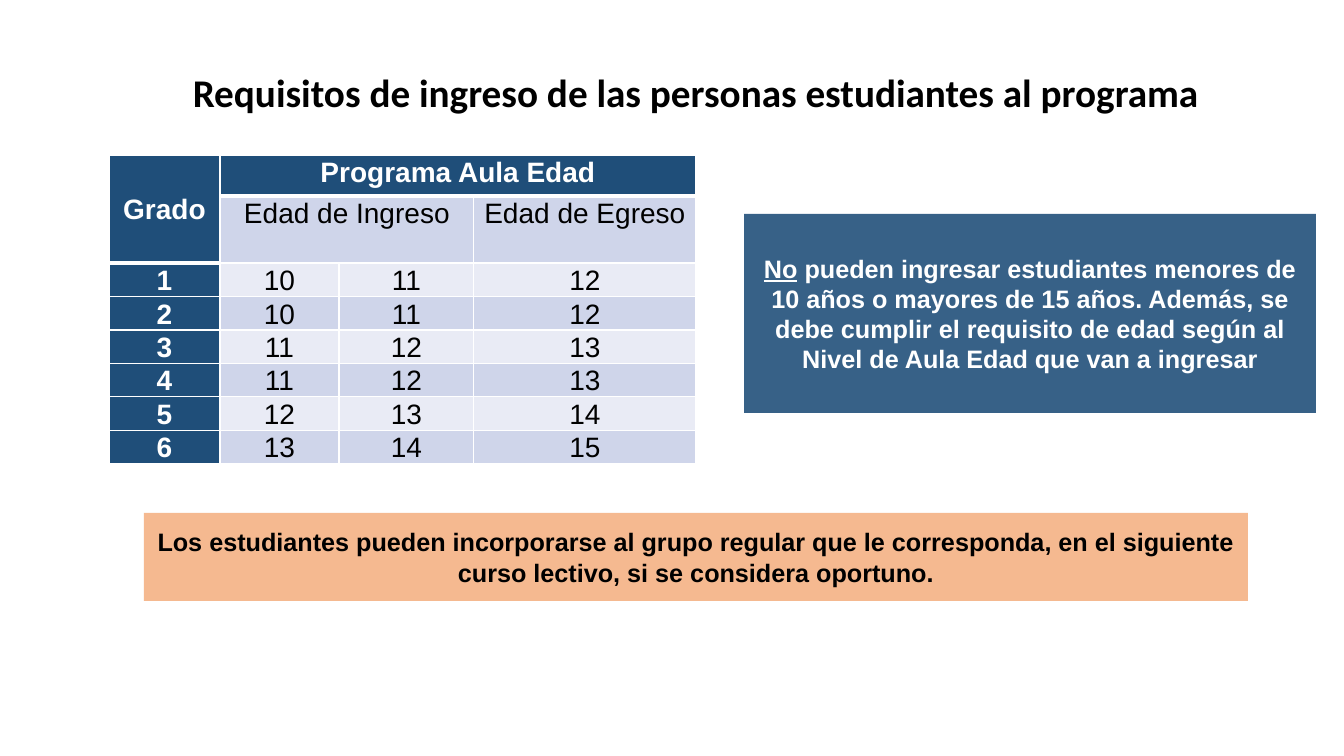
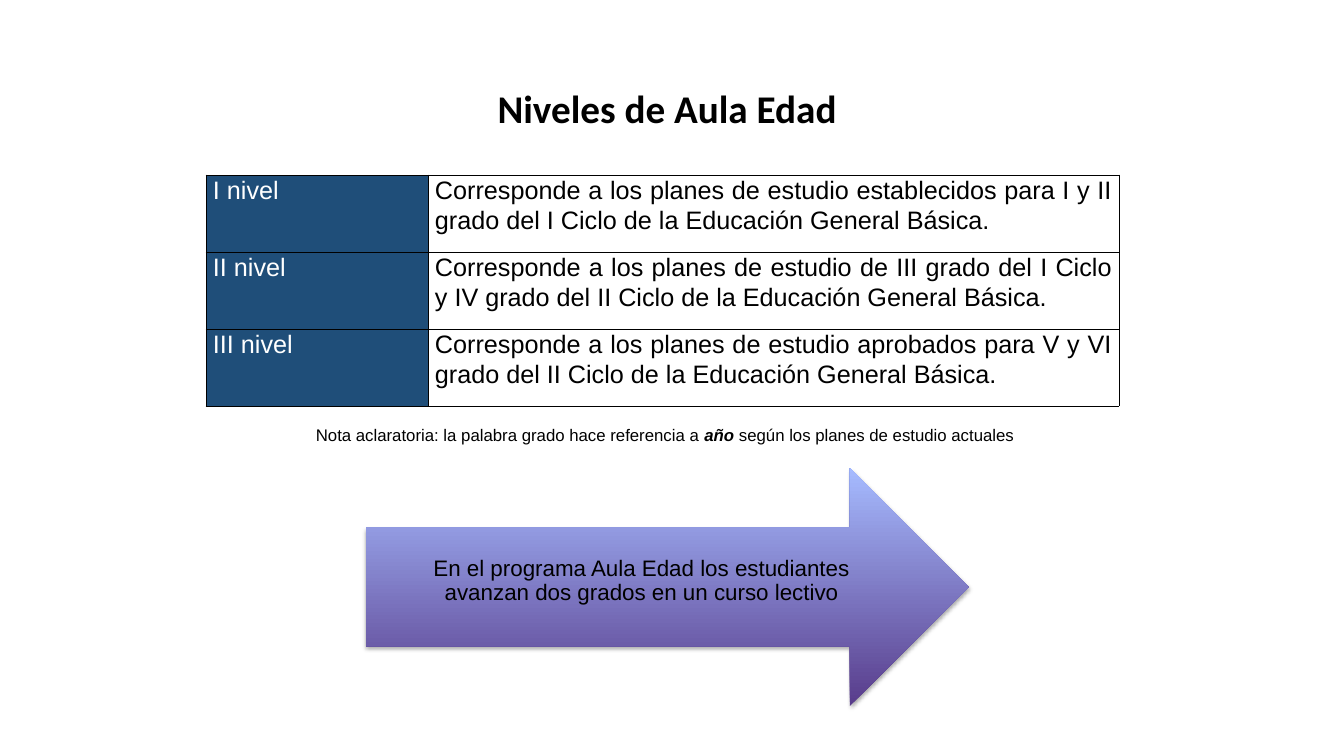
import pptx
import pptx.util
import pptx.dml.color
import pptx.enum.shapes
import pptx.enum.text
import pptx.oxml.ns
import lxml.etree

PX = 9071
COLORS = {
    "navy": "1F4E79",
    "peach": "F4B183",
    "band_dark": "CFD5EA",
    "band_light": "E9EBF5",
    "white": "FFFFFF",
    "black": "000000",
    "arrow_bottom": "583C8B",
    "arrow_top": "A6BBFF",
}
RGB = {name: pptx.dml.color.RGBColor.from_string(value) for name, value in COLORS.items()}
ALIGN = pptx.enum.text.PP_ALIGN
ANCHOR = pptx.enum.text.MSO_ANCHOR
SHAPE = pptx.enum.shapes.MSO_SHAPE
qn = pptx.oxml.ns.qn


def write(frame, runs, size, color, align=ALIGN.CENTER, spacing=1.0, font="Arial", bold=False):
    frame.word_wrap = True
    paragraph = frame.paragraphs[0]
    paragraph.alignment = align
    paragraph.line_spacing = spacing
    for text, marks in runs:
        run = paragraph.add_run()
        run.text = text
        run.font.name = font
        run.font.size = pptx.util.Pt(size)
        run.font.color.rgb = RGB[color]
        run.font.bold = bold or "b" in marks
        run.font.italic = "i" in marks
        run.font.underline = "u" in marks


def format_cell(cell, fill, border, widths):
    cell.margin_left = cell.margin_right = 7 * PX
    cell.margin_top = cell.margin_bottom = 0
    properties = cell._tc.get_or_add_tcPr()
    for side, width in zip("LRTB", widths):
        edge = lxml.etree.SubElement(properties, qn(f"a:ln{side}"), w=str(pptx.util.Pt(width)))
        paint = lxml.etree.SubElement(edge, qn("a:solidFill"))
        lxml.etree.SubElement(paint, qn("a:srgbClr"), val=COLORS[border])
    cell.fill.solid()
    cell.fill.fore_color.rgb = RGB[fill]


deck = pptx.Presentation()
deck.slide_width = 1344 * PX
deck.slide_height = 756 * PX

slides = []
for heading, left, top, width, height in [
    ("Requisitos de ingreso de las personas estudiantes al programa", 140, 69, 1111, 64),
    ("Niveles de Aula Edad", 267, 85, 800, 53),
]:
    slide = deck.slides.add_slide(deck.slide_layouts[5])
    title = slide.shapes.title
    title.left, title.top, title.width, title.height = left * PX, top * PX, width * PX, height * PX
    title.text_frame.auto_size = pptx.enum.text.MSO_AUTO_SIZE.NONE
    title.text_frame.vertical_anchor = ANCHOR.TOP
    write(title.text_frame, [(heading, "")], 28, "black", spacing=0.9, font="Calibri", bold=True)
    slides.append(slide)
requirements, levels = slides

age_rows = [
    ["Grado", "Programa Aula Edad", "", ""],
    ["", "Edad de Ingreso", "", "Edad de Egreso"],
    ["1", "10", "11", "12"],
    ["2", "10", "11", "12"],
    ["3", "11", "12", "13"],
    ["4", "11", "12", "13"],
    ["5", "12", "13", "14"],
    ["6", "13", "14", "15"],
]
ages = requirements.shapes.add_table(8, 4, 109 * PX, 155 * PX, 587 * PX, 306 * PX).table
for column, width in zip(ages.columns, [111, 119, 135, 222]):
    column.width = width * PX
for row, height in zip(ages.rows, [41, 67] + [33] * 6):
    row.height = height * PX
ages.cell(0, 0).merge(ages.cell(1, 0))
ages.cell(0, 1).merge(ages.cell(0, 3))
ages.cell(1, 1).merge(ages.cell(1, 2))
for r, texts in enumerate(age_rows):
    for c, text in enumerate(texts):
        cell = ages.cell(r, c)
        header = r == 0 or c == 0
        last_header_row = 1 if c == 0 else 0
        fill = "navy" if header else "band_dark" if r % 2 else "band_light"
        top = 3 if r == last_header_row + 1 else 1
        bottom = 3 if r <= last_header_row else 1
        format_cell(cell, fill, "white", [1, 1, top, bottom])
        if text:
            write(cell.text_frame, [(text, "")], 20, "white" if header else "black",
                  spacing=1.07, bold=header)
ages.cell(0, 0).vertical_anchor = ANCHOR.MIDDLE

notices = [
    (144, 513, 1104, 88, "peach", "black", [
        ("Los estudiantes pueden incorporarse al grupo regular que le corresponda, "
         "en el siguiente curso lectivo, si se considera oportuno.", "")]),
    (744, 214, 572, 199, "navy", "white", [
        ("No", "u"),
        (" pueden ingresar estudiantes menores de 10 años o mayores de 15 años. Además, "
         "se debe cumplir el requisito de edad según al Nivel de Aula Edad que van a ingresar", "")]),
]
for left, top, width, height, fill, color, runs in notices:
    notice = requirements.shapes.add_shape(
        SHAPE.RECTANGLE, left * PX, top * PX, width * PX, height * PX)
    notice.shadow.inherit = False
    notice.line.fill.background()
    notice.fill.solid()
    notice.fill.fore_color.rgb = RGB[fill]
    tint = notice._element.spPr.find(qn("a:solidFill"))[0]
    lxml.etree.SubElement(tint, qn("a:alpha"), val="89000")
    notice.text_frame.vertical_anchor = ANCHOR.MIDDLE
    write(notice.text_frame, runs, 18, color, bold=True)

level_rows = [
    ("I nivel", "Corresponde a los planes de estudio establecidos para I y II "
                "grado del I Ciclo de la Educación General Básica."),
    ("II nivel", "Corresponde a los planes de estudio de III grado del I Ciclo "
                 "y IV grado del II Ciclo de la Educación General Básica."),
    ("III nivel", "Corresponde a los planes de estudio aprobados para V y VI "
                  "grado del II Ciclo de la Educación General Básica."),
]
plans = levels.shapes.add_table(3, 2, 206 * PX, 175 * PX, 913 * PX, 231 * PX).table
plans.first_row = False
plans.horz_banding = False
for column, width in zip(plans.columns, [222, 691]):
    column.width = width * PX
for r, texts in enumerate(level_rows):
    plans.rows[r].height = 77 * PX
    for c, (text, fill, color) in enumerate(zip(texts, ["navy", "white"], ["white", "black"])):
        cell = plans.cell(r, c)
        format_cell(cell, fill, "black", [0.5] * 4)
        write(cell.text_frame, [(text, "")], 18, color, align=ALIGN.JUSTIFY, spacing=1.07)

note = levels.shapes.add_textbox(306 * PX, 420 * PX, 723 * PX, 30 * PX)
write(note.text_frame, [
    ("Nota aclaratoria: la palabra grado hace referencia a ", ""),
    ("año", "bi"),
    (" según los planes de estudio actuales", ""),
], 12, "black", align=ALIGN.LEFT)

progress = levels.shapes.add_shape(SHAPE.RIGHT_ARROW, 366 * PX, 468 * PX, 603 * PX, 238 * PX)
progress.line.fill.background()
progress.fill.gradient()
progress.fill.gradient_angle = 90
for stop, color in zip(progress.fill.gradient_stops, ["arrow_bottom", "arrow_top"]):
    stop.color.rgb = RGB[color]
progress.shadow.inherit = False
shadow = lxml.etree.SubElement(
    progress._element.spPr.find(qn("a:effectLst")), qn("a:outerShdw"),
    blurRad=str(pptx.util.Pt(3.1)), dist=str(pptx.util.Pt(1.8)), dir="5400000", rotWithShape="0")
shade = lxml.etree.SubElement(shadow, qn("a:srgbClr"), val=COLORS["black"])
lxml.etree.SubElement(shade, qn("a:alpha"), val="35000")

pace = levels.shapes.add_textbox(394 * PX, 538 * PX, 495 * PX, 87 * PX)
pace.text_frame.margin_left = pace.text_frame.margin_right = 0
pace.text_frame.margin_top = pace.text_frame.margin_bottom = 18 * PX
pace.text_frame.vertical_anchor = ANCHOR.MIDDLE
write(pace.text_frame, [
    ("En el programa Aula Edad los estudiantes avanzan dos grados en un curso lectivo", ""),
], 16, "black", spacing=0.9)

deck.save("out.pptx")
